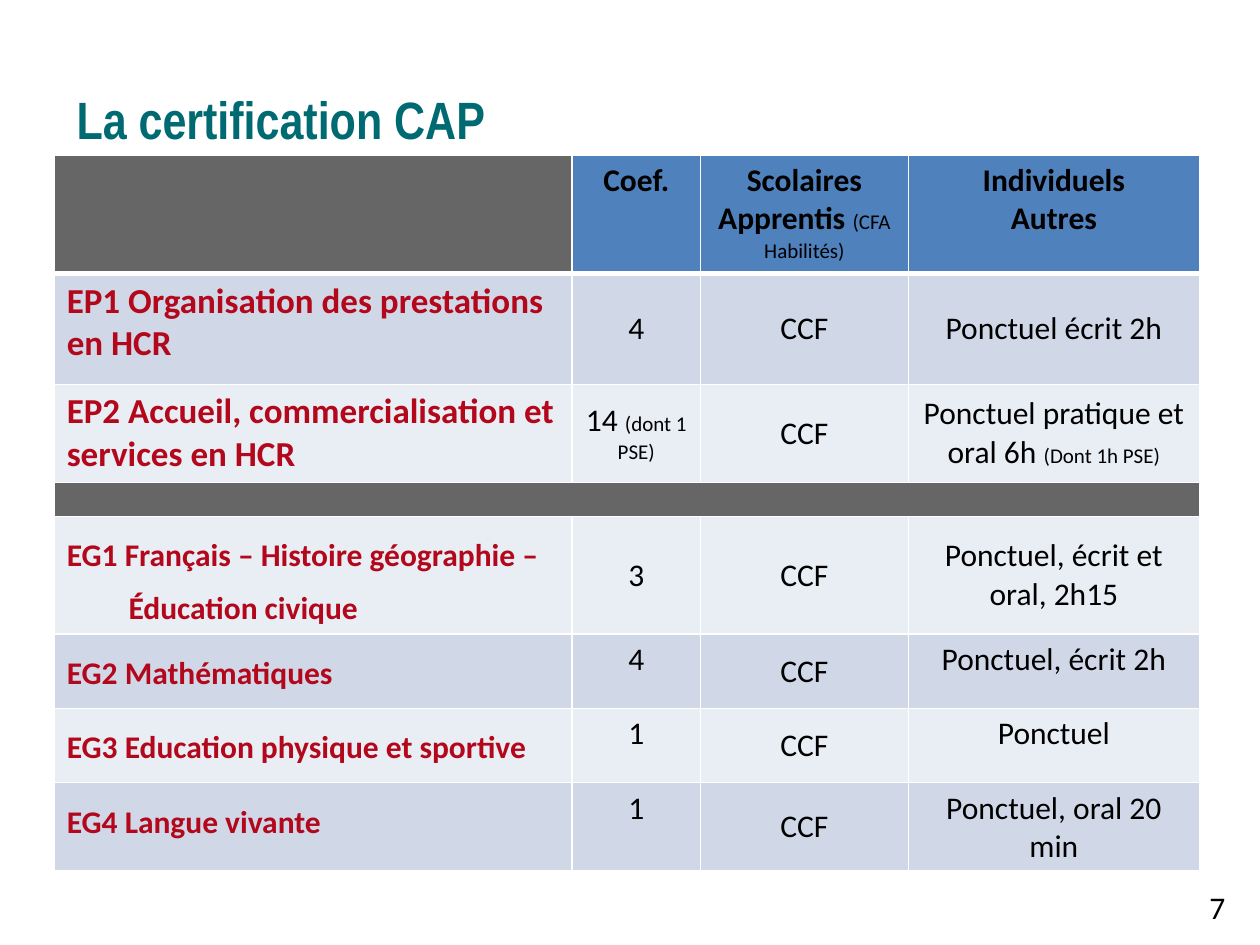
from lxml import etree
from pptx import Presentation
from pptx.dml.color import RGBColor
from pptx.enum.text import MSO_ANCHOR, PP_ALIGN
from pptx.oxml.ns import qn
from pptx.util import Inches, Pt

TOP, MIDDLE = MSO_ANCHOR.TOP, MSO_ANCHOR.MIDDLE
LEFT, CENTER = PP_ALIGN.LEFT, PP_ALIGN.CENTER

TEAL = RGBColor(0x00, 0x6A, 0x72)
RED = RGBColor(0xB3, 0x07, 0x1B)
BLACK = RGBColor(0x00, 0x00, 0x00)
WHITE = RGBColor(0xFF, 0xFF, 0xFF)
GRAY = RGBColor(0x66, 0x66, 0x66)
BLUE = RGBColor(0x4F, 0x81, 0xBD)
BAND_DARK = RGBColor(0xD0, 0xD8, 0xE8)
BAND_LIGHT = RGBColor(0xE9, 0xED, 0xF4)

TITLE = "La certification CAP"
PAGE_NUMBER = "7"
COLUMN_WIDTHS = [4.11, 1.02, 1.65, 2.31]
ROW_HEIGHTS = [0.94, 0.88, 0.78, 0.27, 0.84, 0.59, 0.59, 0.59]
SEPARATOR_ROW = 3

# Each cell is a list of paragraphs: (main text, small text)
HEADERS = [
    [("Coef.", "")],
    [("Scolaires", ""), ("Apprentis ", "(CFA Habilités)")],
    [("Individuels", ""), ("Autres", "")],
]
EXAMS = {
    1: ("EP1 Organisation des prestations en HCR",
        [("4", ""), ("CCF", ""), ("Ponctuel écrit 2h", "")]),
    2: ("EP2 Accueil, commercialisation et services en HCR",
        [("14 ", "(dont 1 PSE)"), ("CCF", ""),
         ("Ponctuel pratique et oral 6h ", "(Dont 1h PSE)")]),
    4: ("EG1 Français – Histoire géographie – Éducation civique",
        [("3", ""), ("CCF", ""), ("Ponctuel, écrit et oral, 2h15", "")]),
    5: ("EG2 Mathématiques",
        [("4", ""), ("CCF", ""), ("Ponctuel, écrit 2h", "")]),
    6: ("EG3 Education physique et sportive",
        [("1", ""), ("CCF", ""), ("Ponctuel", "")]),
    7: ("EG4 Langue vivante",
        [("1", ""), ("CCF", ""), ("Ponctuel, oral 20 min", "")]),
}


def style_font(font, size, color, bold=False, name="Calibri"):
    font.name = name
    font.size = Pt(size)
    font.bold = bold
    font.color.rgb = color


def add_text(slide, box, text, size, color, bold=False, name="Calibri"):
    frame = slide.shapes.add_textbox(*map(Inches, box)).text_frame
    frame.word_wrap = True
    paragraph = frame.paragraphs[0]
    paragraph.text = text
    style_font(paragraph.font, size, color, bold, name)
    return frame


def set_borders(cell, top=1, bottom=1):
    properties = cell._tc.get_or_add_tcPr()
    for tag, width in (("lnL", 1), ("lnR", 1), ("lnT", top), ("lnB", bottom)):
        line = etree.SubElement(properties, qn(f"a:{tag}"), w=str(Pt(width)))
        fill = etree.SubElement(line, qn("a:solidFill"))
        etree.SubElement(fill, qn("a:srgbClr"), val=str(WHITE))


def fill_cell(cell, color):
    cell.fill.solid()
    cell.fill.fore_color.rgb = color


def write_cell(cell, paragraphs, size, color, bold, alignment, anchor):
    cell.vertical_anchor = anchor
    frame = cell.text_frame
    for index, (main, small) in enumerate(paragraphs):
        paragraph = frame.add_paragraph() if index else frame.paragraphs[0]
        paragraph.alignment = alignment
        style_font(paragraph.font, size, color, bold)
        paragraph.add_run().text = main
        if small:
            run = paragraph.add_run()
            run.text = small
            run.font.size = Pt(12)
            run.font.bold = False


def write_exam(table, row, label, values):
    general = row > SEPARATOR_ROW
    label_cell = table.cell(row, 0)
    write_cell(label_cell, [(label, "")], 18 if general else 20, RED, True, LEFT, TOP)
    if general:
        paragraph = label_cell.text_frame.paragraphs[0]
        paragraph.line_spacing = Pt(30)
        indent = Inches(0.49 if row == 4 else 0.38)
        properties = paragraph._p.get_or_add_pPr()
        properties.set("marL", str(indent))
        properties.set("indent", str(-indent))
    for column, value in enumerate(values, 1):
        anchor = TOP if row > 4 and column != 2 else MIDDLE
        write_cell(table.cell(row, column), [value], 18, BLACK, False, CENTER, anchor)


def add_exam_table(slide):
    frame = slide.shapes.add_table(
        len(ROW_HEIGHTS), len(COLUMN_WIDTHS), Inches(0.43), Inches(1.23),
        Inches(sum(COLUMN_WIDTHS)), Inches(sum(ROW_HEIGHTS)))
    table = frame.table
    for column, width in zip(table.columns, COLUMN_WIDTHS):
        column.width = Inches(width)
    for row, height in enumerate(ROW_HEIGHTS):
        table.rows[row].height = Inches(height)
        band = BAND_DARK if row % 2 else BAND_LIGHT
        for column in range(len(COLUMN_WIDTHS)):
            cell = table.cell(row, column)
            set_borders(cell, 3 if row == 1 else 1, 3 if row == 0 else 1)
            gray = row == SEPARATOR_ROW or (row == 0 and column == 0)
            fill_cell(cell, GRAY if gray else BLUE if row == 0 else band)
            if row == SEPARATOR_ROW:
                ending = cell.text_frame.paragraphs[0]._p.get_or_add_endParaRPr()
                ending.set("sz", "800")
    table.cell(SEPARATOR_ROW, 0).merge(table.cell(SEPARATOR_ROW, 3))
    for column, header in enumerate(HEADERS, 1):
        write_cell(table.cell(0, column), header, 18, BLACK, True, CENTER, TOP)
    for row, (label, values) in EXAMS.items():
        write_exam(table, row, label, values)


def main():
    presentation = Presentation()
    presentation.slide_width = Inches(10)
    presentation.slide_height = Inches(7.5)
    slide = presentation.slides.add_slide(presentation.slide_layouts[6])
    title = add_text(slide, (0.51, 0.6, 9, 0.72), TITLE, 30, TEAL, True, "Arial Narrow")
    title.vertical_anchor = MIDDLE
    title.margin_top = title.margin_bottom = 0
    title.paragraphs[0].line_spacing = Pt(33)
    add_exam_table(slide)
    add_text(slide, (9.5, 7, 0.37, 0.2), PAGE_NUMBER, 18, BLACK)
    presentation.save("out.pptx")


if __name__ == "__main__":
    main()
